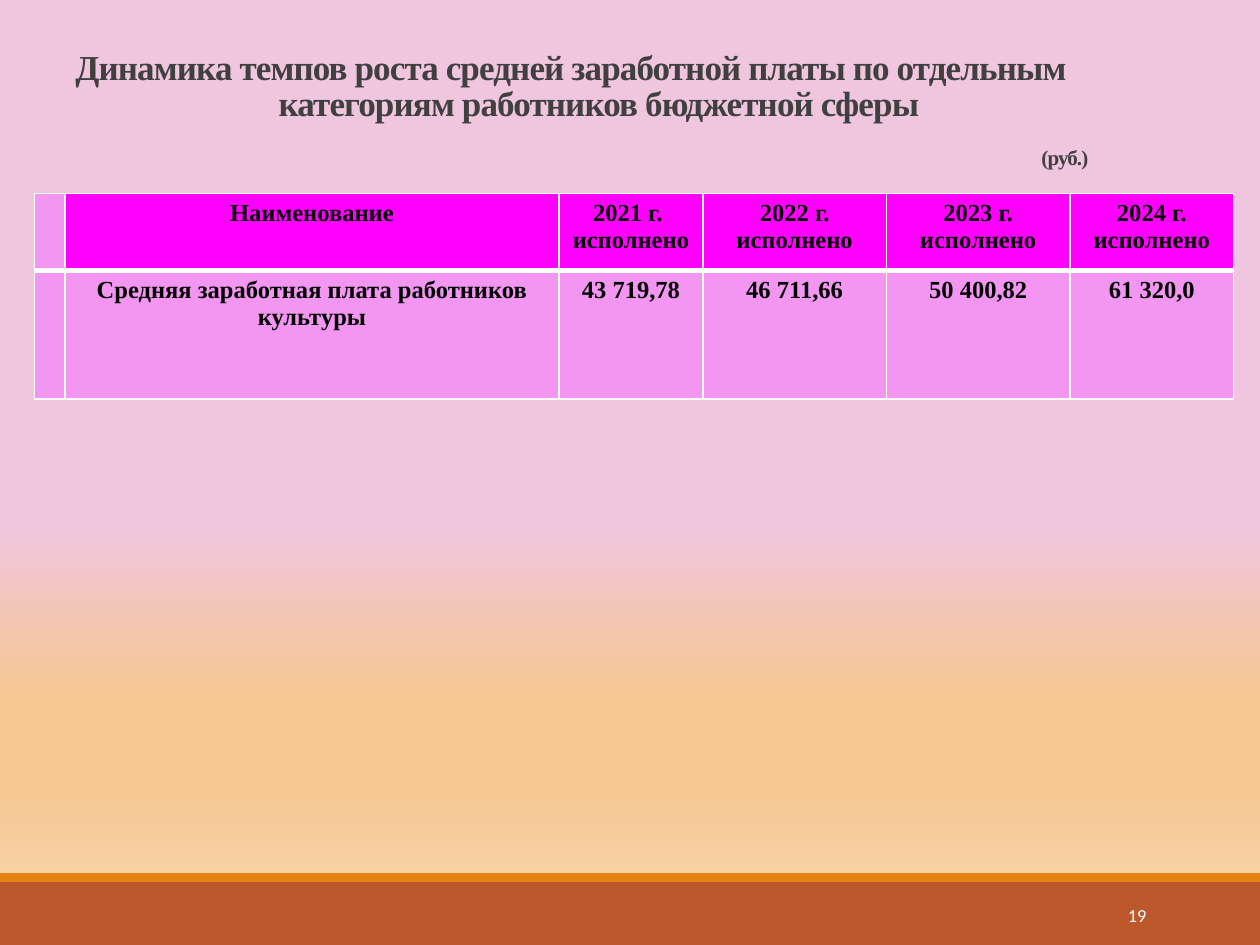
from dataclasses import dataclass

from lxml.etree import SubElement
from pptx import Presentation
from pptx.dml.color import RGBColor
from pptx.enum.shapes import MSO_SHAPE as SHAPE
from pptx.enum.text import MSO_ANCHOR as ANCHOR, PP_ALIGN as ALIGN
from pptx.oxml import parse_xml
from pptx.oxml.ns import nsdecls, qn
from pptx.util import Cm, Pt

WHITE = RGBColor(0xFF, 0xFF, 0xFF)
BLACK = RGBColor(0x00, 0x00, 0x00)
GRAY = RGBColor(0x40, 0x40, 0x40)
RUST = RGBColor(0xBD, 0x58, 0x2C)
ORANGE = RGBColor(0xE4, 0x83, 0x12)
MAGENTA = RGBColor(0xFF, 0x00, 0xFF)
PINK = RGBColor(0xF2, 0x96, 0xF2)
BACKGROUND_STOPS = (
    (55, RGBColor(0xF0, 0xC6, 0xDE)),
    (74, RGBColor(0xF6, 0xC7, 0x91)),
    (83, RGBColor(0xF6, 0xC7, 0x91)),
    (100, RGBColor(0xF9, 0xDA, 0xB6)),
)
SERIF = "Times New Roman"


@dataclass
class Band:
    top: float
    height: float
    color: RGBColor


@dataclass
class TitleLine:
    text: str
    size: float
    align: ALIGN
    before: float = 0
    right: float = 0


BANDS = (Band(17.78, 1.27, RUST), Band(17.6, 0.18, ORANGE))
TITLE = (
    TitleLine("Динамика темпов роста средней заработной платы по отдельным", 20, ALIGN.LEFT),
    TitleLine("категориям работников бюджетной сферы", 20, ALIGN.CENTER),
    TitleLine("(руб.)", 12, ALIGN.RIGHT, before=14, right=0.68),
)
COLUMNS = (0.61, 9.96, 2.9, 3.7, 3.7, 3.3)
ROWS = (1.55, 2.59)
CELLS = (
    ("", "Наименование", "2021 г. \nисполнено", "2022 г.\nисполнено",
     "2023 г.\nисполнено", "2024 г.\nисполнено"),
    ("", "Средняя заработная плата работников культуры",
     "43 719,78", "46 711,66", "50 400,82", "61 320,0"),
)


def write(p, text: str, *, size: float, font: str = SERIF, color: RGBColor = BLACK,
          bold: bool = True, align: ALIGN = ALIGN.CENTER, spacing: int = 0) -> None:
    p.alignment = align
    r = p.add_run()
    r.text = text
    r.font.size, r.font.name, r.font.bold = Pt(size), font, bold
    r.font.color.rgb = color
    if spacing:
        r.font._element.set("spc", str(spacing))


def set_background(s) -> None:
    s.background.fill.gradient()
    s.background.fill.gradient_angle = 270
    stops = s.background._cSld.find(".//" + qn("a:gsLst"))
    for stop in list(stops):
        stops.remove(stop)
    for position, color in BACKGROUND_STOPS:
        stop = SubElement(stops, qn("a:gs"), pos=str(position * 1000))
        SubElement(stop, qn("a:srgbClr"), val=str(color))


def add_band(s, band: Band) -> None:
    sp = s.shapes.add_shape(SHAPE.RECTANGLE, 0, Cm(band.top), Cm(25.4), Cm(band.height))
    sp.shadow.inherit = False
    sp.fill.solid()
    sp.fill.fore_color.rgb = band.color
    sp.line.fill.background()


def add_text_box(s, left: float, top: float, width: float, height: float):
    tf = s.shapes.add_textbox(Cm(left), Cm(top), Cm(width), Cm(height)).text_frame
    tf.word_wrap = True
    tf.vertical_anchor = ANCHOR.MIDDLE
    return tf


def add_title(s) -> None:
    tf = add_text_box(s, 1.27, 0.85, 21.6, 2.77)
    for i, line in enumerate(TITLE):
        p = tf.add_paragraph() if i else tf.paragraphs[0]
        p.line_spacing = 0.85
        if line.before:
            p.space_before = Pt(line.before)
        if line.right:
            p._p.get_or_add_pPr().set("marR", str(Cm(line.right)))
        write(p, line.text, size=line.size, color=GRAY, align=line.align, spacing=-50)


def set_borders(cell, **widths: float) -> None:
    tcPr = cell._tc.get_or_add_tcPr()
    for i, (side, width) in enumerate(widths.items()):
        tcPr.insert(i, parse_xml(
            f'<a:ln{side} {nsdecls("a")} w="{Pt(width)}"><a:solidFill>'
            f'<a:srgbClr val="{WHITE}"/></a:solidFill></a:ln{side}>'))


def add_salary_table(s) -> None:
    table = s.shapes.add_table(len(ROWS), len(COLUMNS), Cm(0.7), Cm(3.9),
                               Cm(sum(COLUMNS)), Cm(sum(ROWS))).table
    for column, width in zip(table.columns, COLUMNS):
        column.width = Cm(width)
    for i, (height, texts) in enumerate(zip(ROWS, CELLS)):
        table.rows[i].height = Cm(height)
        for j, text in enumerate(texts):
            cell = table.cell(i, j)
            cell.fill.solid()
            cell.fill.fore_color.rgb = MAGENTA if i == 0 and j else PINK
            set_borders(cell, L=1, R=1, T=3 if i else 1, B=1 if i else 3)
            tf = cell.text_frame
            for k, line in enumerate(text.split("\n") if text else ()):
                write(tf.add_paragraph() if k else tf.paragraphs[0], line, size=14)


def main() -> None:
    prs = Presentation()
    prs.slide_width, prs.slide_height = Cm(25.4), Cm(19.05)
    s = prs.slides.add_slide(prs.slide_layouts[6])
    set_background(s)
    for band in BANDS:
        add_band(s, band)
    add_title(s)
    add_salary_table(s)
    page = add_text_box(s, 20.62, 17.93, 2.74, 1.02)
    write(page.paragraphs[0], "19", size=10.5, font="Calibri", color=WHITE,
          bold=False, align=ALIGN.RIGHT)
    prs.save("out.pptx")


if __name__ == "__main__":
    main()
